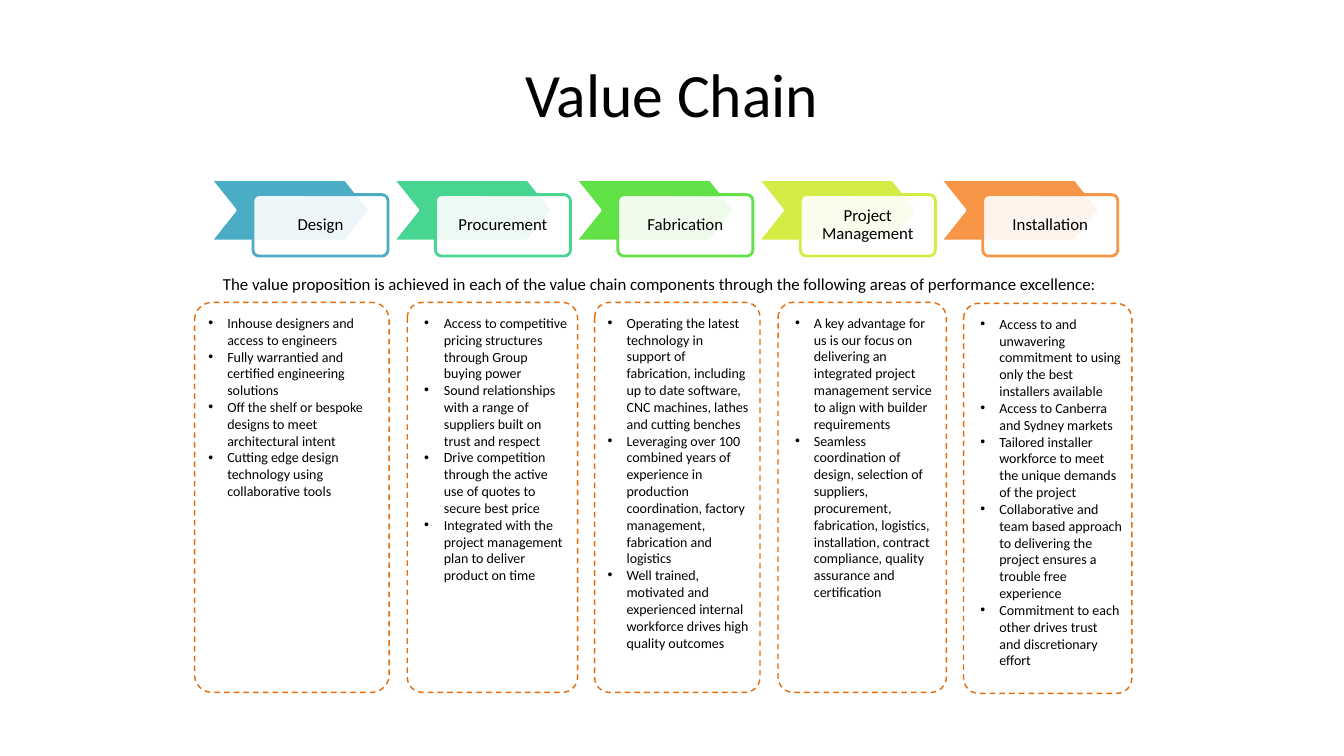
"""Build the Value Chain slide: five stages and their areas of performance excellence."""
from dataclasses import dataclass

from lxml import etree
from pptx import Presentation
from pptx.dml.color import RGBColor
from pptx.enum.dml import MSO_LINE
from pptx.enum.shapes import MSO_SHAPE
from pptx.enum.text import MSO_ANCHOR, MSO_AUTO_SIZE, PP_ALIGN
from pptx.oxml.ns import qn
from pptx.shapes.autoshape import Shape
from pptx.slide import Slide
from pptx.text.text import _Paragraph
from pptx.util import Pt

CHEVRON = MSO_SHAPE.CHEVRON
ROUNDED = MSO_SHAPE.ROUNDED_RECTANGLE
DASH = MSO_LINE.DASH
MIDDLE = MSO_ANCHOR.MIDDLE
CENTER = PP_ALIGN.CENTER
LEFT = PP_ALIGN.LEFT
GROW = MSO_AUTO_SIZE.SHAPE_TO_FIT_TEXT

BLACK = RGBColor(0x00, 0x00, 0x00)
WHITE = RGBColor(0xFF, 0xFF, 0xFF)
BLUE = RGBColor(0x4B, 0xAC, 0xC6)
TEAL = RGBColor(0x48, 0xD4, 0x91)
GREEN = RGBColor(0x60, 0xE1, 0x46)
LIME = RGBColor(0xD5, 0xEC, 0x46)
ORANGE = RGBColor(0xF7, 0x96, 0x46)
FRAME_ORANGE = RGBColor(0xE4, 0x6C, 0x0A)

FONT = "Calibri"
STAGE_LEFT, STAGE_TOP, STAGE_PITCH = 150.5, 128.2, 130.32
CHEVRON_WIDTH, STAGE_HEIGHT = 113.8, 43.9
CARD_SHIFT_X, CARD_SHIFT_Y, CARD_WIDTH = 30.2, 10.8, 96.5
FRAME_HEIGHT = 278.6
TEXT_DROP = 5


@dataclass(frozen=True)
class Stage:
    name: str
    color: RGBColor
    frame_left: float
    frame_top: float
    frame_width: float
    text_shift: float
    text_height: float
    indent: float
    strengths: tuple[str, ...]


STAGES = (
    Stage("Design", BLUE, 139, 216, 139, 2.8, 140.4, 13.5, (
        "Inhouse designers and access to engineers",
        "Fully warrantied and certified engineering solutions",
        "Off the shelf or bespoke designs to meet architectural intent",
        "Cutting edge design technology using collaborative tools",
    )),
    Stage("Procurement", TEAL, 290.9, 216, 121.7, 5, 200.9, 14.1, (
        "Access to competitive pricing structures through Group buying power",
        "Sound relationships with a range of suppliers built on trust and respect",
        "Drive competition through the active use of quotes to secure best price",
        "Integrated with the project management plan to deliver product on time",
    )),
    Stage("Fabrication", GREEN, 424.8, 216, 118.1, 2.2, 249.8, 13.5, (
        "Operating the latest technology in support of fabrication, including up to date "
        "software, CNC machines, lathes and cutting benches",
        "Leveraging over 100 combined years of experience in production coordination, "
        "factory management, fabrication and logistics",
        "Well trained, motivated and experienced internal workforce drives high quality outcomes",
    )),
    Stage("Project Management", LIME, 555.8, 216, 120.2, 5, 213.1, 13.5, (
        "A key advantage for us is our focus on delivering an integrated project "
        "management service to align with builder requirements",
        "Seamless coordination of design, selection of suppliers, procurement, fabrication, "
        "logistics, installation, contract compliance, quality assurance and certification",
    )),
    Stage("Installation", ORANGE, 688.3, 216.7, 120.2, 5, 273.6, 13.5, (
        "Access to and unwavering commitment to using only the best installers available",
        "Access to Canberra and Sydney markets",
        "Tailored installer workforce to meet the unique demands of the project",
        "Collaborative and team based approach to delivering the project ensures a trouble "
        "free experience",
        "Commitment to each other drives trust and discretionary effort",
    )),
)


def style_paragraph(paragraph: _Paragraph, size: float, align: PP_ALIGN = LEFT) -> None:
    """Give a paragraph its font and alignment."""
    paragraph.font.name = FONT
    paragraph.font.size = Pt(size)
    paragraph.font.color.rgb = BLACK
    paragraph.alignment = align


def add_bullet(paragraph: _Paragraph, indent: float) -> None:
    """Hang a paragraph on a round bullet."""
    properties = paragraph._p.get_or_add_pPr()
    properties.set("marL", str(Pt(indent)))
    properties.set("indent", str(-Pt(indent)))
    bullet_font = etree.Element(qn("a:buFont"), typeface="Arial")
    bullet = etree.Element(qn("a:buChar"), char="•")
    properties.insert(0, bullet_font)
    properties.insert(1, bullet)


def add_text(slide: Slide, left: float, top: float, width: float, height: float,
             lines: tuple[str, ...], size: float) -> Shape:
    """Add a wrapping text box with one paragraph per line."""
    box = slide.shapes.add_textbox(Pt(left), Pt(top), Pt(width), Pt(height))
    frame = box.text_frame
    frame.word_wrap = True
    frame.text = "\n".join(lines)
    for paragraph in frame.paragraphs:
        style_paragraph(paragraph, size)
    return box


def add_outline(slide: Slide, kind: MSO_SHAPE, left: float, top: float, width: float,
                height: float, corner: float, line: RGBColor, weight: float) -> Shape:
    """Add a preset shape without shadow, with its adjustment and line."""
    shape = slide.shapes.add_shape(kind, Pt(left), Pt(top), Pt(width), Pt(height))
    shape.shadow.inherit = False
    shape.adjustments[0] = corner
    shape.line.color.rgb = line
    shape.line.width = Pt(weight)
    return shape


def draw_stage(slide: Slide, stage: Stage, left: float) -> None:
    """Draw a chevron and the translucent card that names the stage."""
    chevron = add_outline(slide, CHEVRON, left, STAGE_TOP, CHEVRON_WIDTH, STAGE_HEIGHT,
                          0.4, WHITE, 2)
    chevron.fill.solid()
    chevron.fill.fore_color.rgb = stage.color

    card = add_outline(slide, ROUNDED, left + CARD_SHIFT_X, STAGE_TOP + CARD_SHIFT_Y,
                       CARD_WIDTH, STAGE_HEIGHT, 0.1, stage.color, 2)
    card.fill.solid()
    card.fill.fore_color.rgb = WHITE
    white = card.fill._xPr.find(qn("a:solidFill")).find(qn("a:srgbClr"))
    etree.SubElement(white, qn("a:alpha"), val="90000")

    label = card.text_frame
    label.word_wrap = True
    label.vertical_anchor = MIDDLE
    label.margin_left = label.margin_right = Pt(6.5)
    label.margin_top = label.margin_bottom = Pt(6.5)
    label.text = stage.name
    name = label.paragraphs[0]
    style_paragraph(name, 12, CENTER)
    name.line_spacing = 0.9


def draw_strengths(slide: Slide, stage: Stage) -> None:
    """Draw the bulleted strengths of a stage inside a dashed frame."""
    strengths = add_text(slide, stage.frame_left + stage.text_shift,
                         stage.frame_top + TEXT_DROP, stage.frame_width - stage.text_shift,
                         stage.text_height, stage.strengths, 10)
    strengths.text_frame.auto_size = GROW
    for paragraph in strengths.text_frame.paragraphs:
        add_bullet(paragraph, stage.indent)
    frame = add_outline(slide, ROUNDED, stage.frame_left, stage.frame_top,
                        stage.frame_width, FRAME_HEIGHT, 0.09, FRAME_ORANGE, 1)
    frame.fill.background()
    frame.line.dash_style = DASH


def main() -> None:
    """Build and save the slide."""
    deck = Presentation()
    deck.slide_width, deck.slide_height = Pt(960), Pt(540)
    slide = deck.slides.add_slide(deck.slide_layouts[6])

    title = add_text(slide, 48, 21.6, 864, 90, ("Value Chain",), 44)
    title.text_frame.vertical_anchor = MIDDLE
    title.text_frame.paragraphs[0].alignment = CENTER

    for index, stage in enumerate(STAGES):
        draw_stage(slide, stage, STAGE_LEFT + index * STAGE_PITCH)
        draw_strengths(slide, stage)

    proposition = add_text(slide, 152.2, 192.2, 666.7, 21.6, (
        "The value proposition is achieved in each of the value chain components "
        "through the following areas of performance excellence:",), 12)
    proposition.text_frame.auto_size = GROW
    deck.save("out.pptx")


if __name__ == "__main__":
    main()
